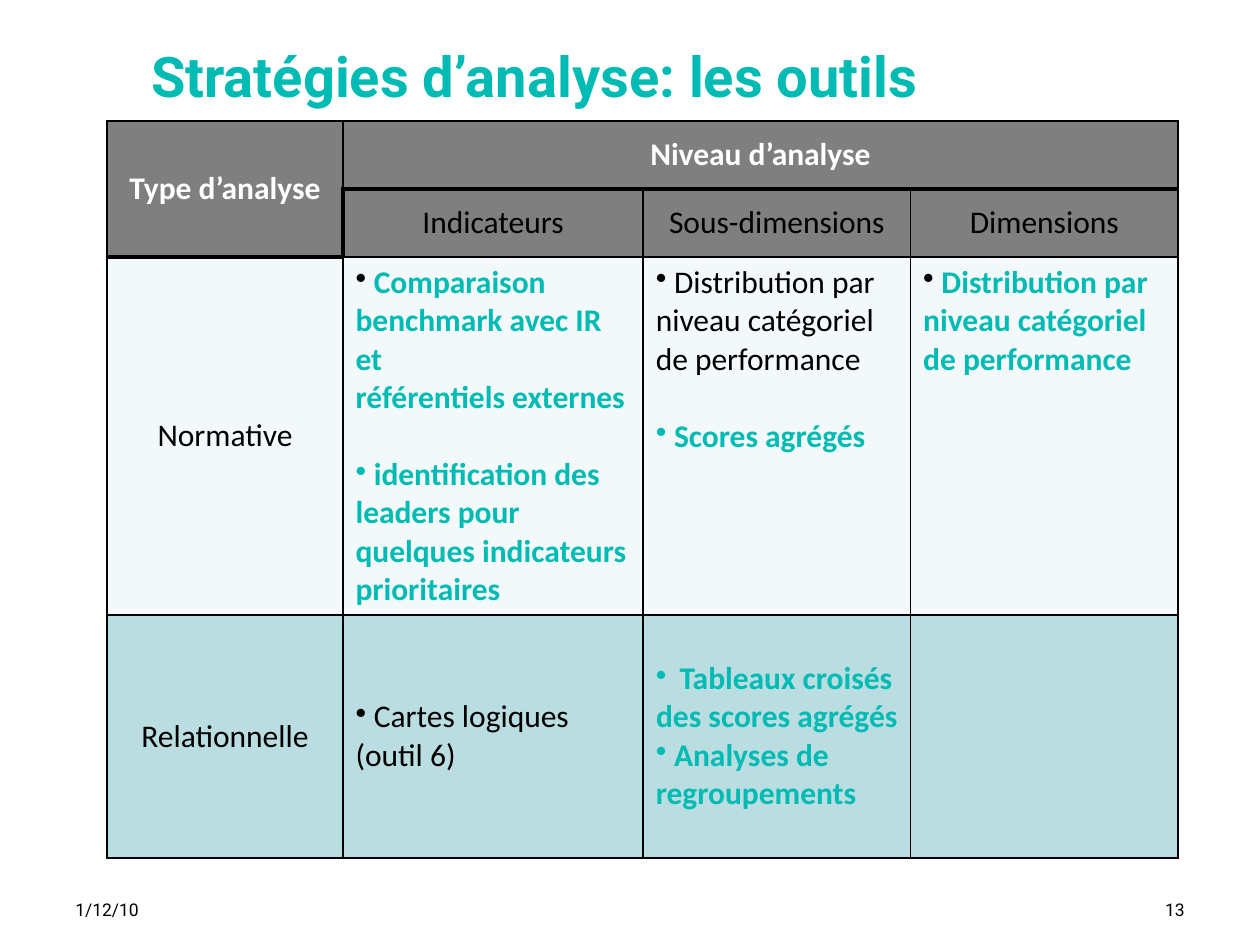
import lxml.etree
import pptx
import pptx.dml.color
import pptx.enum.text
import pptx.oxml.ns
import pptx.util

TEAL = pptx.dml.color.RGBColor(0x00, 0xBB, 0xB4)
BLACK = pptx.dml.color.RGBColor(0x00, 0x00, 0x00)
WHITE = pptx.dml.color.RGBColor(0xFF, 0xFF, 0xFF)
GREY = pptx.dml.color.RGBColor(0x7F, 0x7F, 0x7F)
PALE = pptx.dml.color.RGBColor(0xF3, 0xF9, 0xFA)
AQUA = pptx.dml.color.RGBColor(0xBA, 0xDD, 0xE1)

ALIGN = pptx.enum.text.PP_ALIGN
ANCHOR = pptx.enum.text.MSO_ANCHOR
LINE_GAP = 22

COLUMN_WIDTHS = (1.87, 2.38, 2.12, 2.12)
ROW_HEIGHTS = (0.54, 0.54, 2.84, 1.93)
ROW_FILLS = (GREY, GREY, PALE, AQUA)
HEADINGS = {
    (0, 0): ("Type d’analyse", WHITE),
    (0, 1): ("Niveau d’analyse", WHITE),
    (1, 1): ("Indicateurs", BLACK),
    (1, 2): ("Sous-dimensions", BLACK),
    (1, 3): ("Dimensions", BLACK),
    (2, 0): ("Normative", BLACK),
    (3, 0): ("Relationnelle", BLACK),
}
TOOLS = {
    (2, 1): (
        dict(text=" Comparaison benchmark avec IR et", color=TEAL, bullet=BLACK),
        dict(text="référentiels externes", color=TEAL),
        dict(text=" identification des leaders pour quelques indicateurs prioritaires",
             color=TEAL, bullet=TEAL, gap=LINE_GAP),
    ),
    (2, 2): (
        dict(text=" Distribution par niveau catégoriel de performance", color=BLACK, bullet=BLACK),
        dict(text=" Scores agrégés", color=TEAL, bullet=TEAL, gap=LINE_GAP),
    ),
    (2, 3): (
        dict(text=" Distribution par niveau catégoriel de performance", color=TEAL, bullet=BLACK),
    ),
    (3, 1): (dict(text=" Cartes logiques (outil 6)", color=BLACK, bullet=BLACK),),
    (3, 2): (
        dict(text=" Tableaux croisés des scores agrégés", color=TEAL, bullet=TEAL,
             alignment=ALIGN.CENTER),
        dict(text=" Analyses de regroupements", color=TEAL, bullet=TEAL),
    ),
}
THICK_BELOW = {(0, 1), (0, 2), (0, 3), (1, 0)}
THICK_RIGHT = {(1, 0)}


def add_element(parent, tag, **attributes):
    """Append a DrawingML element to a parent."""
    return lxml.etree.SubElement(parent, pptx.oxml.ns.qn(tag), attributes)


def format_font(font, name, size, color, bold):
    """Set the face, size, colour and weight of a font."""
    font.name, font.size, font.bold = name, pptx.util.Pt(size), bold
    font.color.rgb = color


def write_paragraph(paragraph, text, color, bold, bullet=None, gap=0, alignment=ALIGN.LEFT):
    """Fill one table paragraph, with a bullet if it has a bullet colour."""
    paragraph.text = text
    paragraph.alignment = alignment
    if gap:
        paragraph.space_before = pptx.util.Pt(gap)
    if bullet is not None:
        properties = paragraph._p.get_or_add_pPr()
        bullet_color = add_element(properties, "a:buClr")
        add_element(bullet_color, "a:srgbClr", val=str(bullet))
        add_element(properties, "a:buChar", char="•")
    format_font(paragraph.runs[0].font, "Calibri", 18, color, bold)


def draw_borders(cell, row, column):
    """Draw the four borders of a cell, thick around the heading steps."""
    sides = {
        "a:lnL": (row, column - 1) in THICK_RIGHT,
        "a:lnR": (row, column) in THICK_RIGHT,
        "a:lnT": (row - 1, column) in THICK_BELOW,
        "a:lnB": (row, column) in THICK_BELOW,
    }
    properties = cell._tc.get_or_add_tcPr()
    for tag, thick in sides.items():
        width = pptx.util.Pt(3 if thick else 1)
        border = add_element(properties, tag, w=str(int(width)))
        fill = add_element(border, "a:solidFill")
        add_element(fill, "a:srgbClr", val=str(BLACK))


def add_label(slide, box, text, size, color, bold=False, alignment=ALIGN.LEFT):
    """Place a bottom-anchored line of text in a box."""
    shape = slide.shapes.add_textbox(*map(pptx.util.Inches, box))
    frame = shape.text_frame
    frame.word_wrap = True
    frame.vertical_anchor = ANCHOR.BOTTOM
    frame.text = text
    paragraph = frame.paragraphs[0]
    paragraph.alignment = alignment
    format_font(paragraph.runs[0].font, "Roboto", size, color, bold)


def add_tools_table(slide, box):
    """Place the table of analysis tools in a box, sharing its width and height."""
    left, top, width, height = box
    shape = slide.shapes.add_table(len(ROW_HEIGHTS), len(COLUMN_WIDTHS),
                                   *map(pptx.util.Inches, box))
    table = shape.table
    table.first_row = table.horz_banding = False
    for column, share in zip(table.columns, COLUMN_WIDTHS):
        column.width = pptx.util.Inches(width * share / sum(COLUMN_WIDTHS))
    for row, share in zip(table.rows, ROW_HEIGHTS):
        row.height = pptx.util.Inches(height * share / sum(ROW_HEIGHTS))
    table.cell(0, 0).merge(table.cell(1, 0))
    table.cell(0, 1).merge(table.cell(0, 3))

    for row, row_fill in enumerate(ROW_FILLS):
        for column in range(len(COLUMN_WIDTHS)):
            cell = table.cell(row, column)
            draw_borders(cell, row, column)
            cell.fill.solid()
            cell.fill.fore_color.rgb = row_fill
            is_tool_list = row == 2 and column > 0
            cell.vertical_anchor = ANCHOR.TOP if is_tool_list else ANCHOR.MIDDLE

    for position, (text, color) in HEADINGS.items():
        paragraph = table.cell(*position).text_frame.paragraphs[0]
        write_paragraph(paragraph, text, color, color == WHITE, alignment=ALIGN.CENTER)
    for position, items in TOOLS.items():
        frame = table.cell(*position).text_frame
        for index, item in enumerate(items):
            paragraph = frame.add_paragraph() if index else frame.paragraphs[0]
            write_paragraph(paragraph, bold=item["color"] == TEAL, **item)


def add_footer(slide, box):
    """Place the date at the left and the page number at the right of a box."""
    left, top, width, height = box
    half = width / 2
    add_label(slide, (left, top, half, height), "1/12/10", 10, BLACK)
    add_label(slide, (left + half, top, half, height), "13", 10, BLACK, alignment=ALIGN.RIGHT)


def main():
    """Build the slide and save it."""
    presentation = pptx.Presentation()
    presentation.slide_width = pptx.util.Inches(10)
    presentation.slide_height = pptx.util.Inches(7.5)
    slide = presentation.slides.add_slide(presentation.slide_layouts[6])
    add_label(slide, (1.1, 0, 8.61, 0.91), "Stratégies d’analyse: les outils", 32, TEAL, bold=True)
    add_tools_table(slide, (0.85, 0.96, 8.5, 5.85))
    add_footer(slide, (0.5, 7.08, 9, 0.27))
    presentation.save("out.pptx")


if __name__ == "__main__":
    main()
